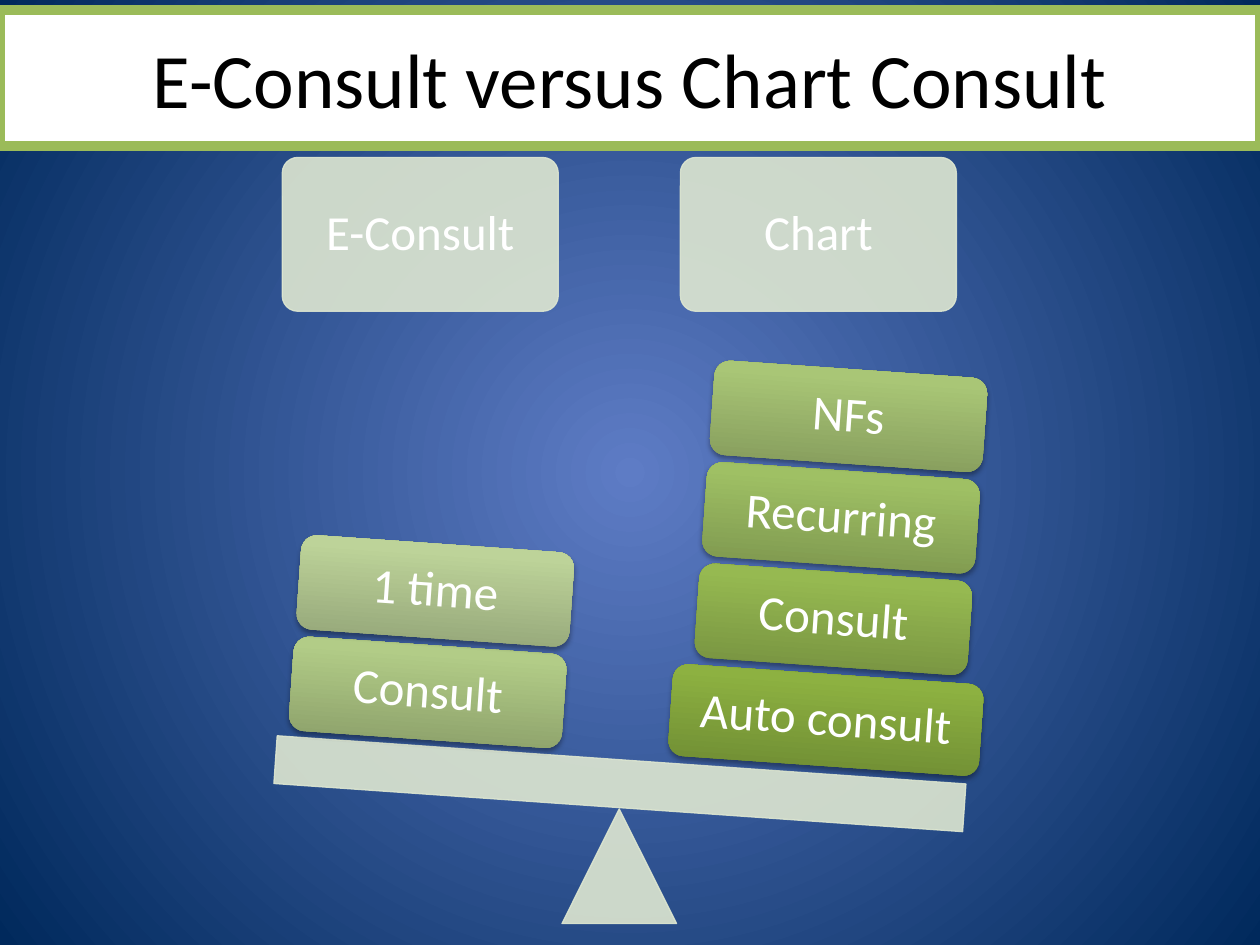
from lxml import etree
from pptx import Presentation
from pptx.dml.color import RGBColor
from pptx.enum.shapes import MSO_SHAPE
from pptx.enum.text import MSO_ANCHOR, PP_ALIGN
from pptx.oxml.ns import qn
from pptx.util import Inches, Pt

ROUNDED = MSO_SHAPE.ROUNDED_RECTANGLE
RECTANGLE = MSO_SHAPE.RECTANGLE
TRIANGLE = MSO_SHAPE.ISOSCELES_TRIANGLE
MIDDLE = MSO_ANCHOR.MIDDLE
CENTER = PP_ALIGN.CENTER

FONT = "Calibri"
WHITE = RGBColor(0xFF, 0xFF, 0xFF)
BLACK = RGBColor(0x00, 0x00, 0x00)
GREEN = RGBColor(0x9B, 0xBB, 0x59)
PALE_GREEN = RGBColor(0xDE, 0xE7, 0xD1)
GLOW_BLUE = RGBColor(0x5E, 0x7C, 0xC5)
NAVY = RGBColor(0x00, 0x29, 0x5C)

TILT = 4
BLOCK_SIZE = (2.17, 0.75)
STACK_STEP = (0.06, 0.805)
WIDE_BLOCK = (
    "Auto consult", (5.32, 5.35, 2.47, 0.73),
    [RGBColor(0x6C, 0x89, 0x32), RGBColor(0x8D, 0xB1, 0x41), RGBColor(0x8E, 0xB4, 0x3F)],
)
CHART_STACK = [
    ("Consult", [RGBColor(0x74, 0x8F, 0x3F), RGBColor(0x96, 0xB9, 0x51), RGBColor(0x98, 0xBC, 0x50)]),
    ("Recurring", [RGBColor(0x7B, 0x94, 0x4D), RGBColor(0x9F, 0xC0, 0x64), RGBColor(0xA1, 0xC2, 0x62)]),
    ("NFs", [RGBColor(0x82, 0x98, 0x5A), RGBColor(0xA9, 0xC6, 0x76), RGBColor(0xAA, 0xC8, 0x75)]),
]
E_CONSULT_STACK = [
    ("Consult", [RGBColor(0x89, 0x9D, 0x68), RGBColor(0xB2, 0xCC, 0x87), RGBColor(0xB4, 0xCF, 0x87)]),
    ("1 time", [RGBColor(0x91, 0xA2, 0x76), RGBColor(0xBD, 0xD3, 0x99), RGBColor(0xBE, 0xD5, 0x99)]),
]


def add_child(parent, tag, **attributes):
    """Append a DrawingML element and return it."""
    return etree.SubElement(parent, qn(tag), {key: str(value) for key, value in attributes.items()})


def set_gradient_stops(element, stops):
    """Replace the stops of the gradient in an element and return the gradient."""
    gradient = element.find(".//" + qn("a:gradFill"))
    gradient.clear()
    gradient.set("rotWithShape", "1")
    stop_list = add_child(gradient, "a:gsLst")
    for percent, color in stops:
        stop = add_child(stop_list, "a:gs", pos=percent * 1000)
        add_child(stop, "a:srgbClr", val=color)
    return gradient


def paint_background(slide):
    """Fill the slide with a round blue glow."""
    slide.background.fill.gradient()
    gradient = set_gradient_stops(slide.element, [(0, GLOW_BLUE), (100, NAVY)])
    circle = add_child(gradient, "a:path", path="circle")
    add_child(circle, "a:fillToRect", l=50000, t=50000, r=50000, b=50000)


def write_text(shape, text, size, color):
    """Write one centred line in a shape."""
    shape.text_frame.vertical_anchor = MIDDLE
    para = shape.text_frame.paragraphs[0]
    para.alignment = CENTER
    span = para.add_run()
    span.text = text
    span.font.name = FONT
    span.font.size = Pt(size)
    span.font.color.rgb = color
    return para


def write_label(shape, text):
    """Write a white label with even margins in a shape."""
    frame = shape.text_frame
    frame.word_wrap = True
    frame.margin_left = frame.margin_right = Inches(0.12)
    frame.margin_top = frame.margin_bottom = Inches(0.12)
    write_text(shape, text, 28, WHITE).line_spacing = 0.9


def add_title(slide, text):
    """Place the title in a white banner with a green border."""
    title = slide.shapes.title
    title.left, title.top = Inches(0), Inches(0.08)
    title.width, title.height = Inches(10), Inches(1.08)
    title.fill.solid()
    title.fill.fore_color.rgb = WHITE
    title.line.color.rgb = GREEN
    title.line.width = Pt(6)
    write_text(title, text, 44, BLACK)


def add_pale_shape(slide, kind, place, rotation=0):
    """Add a slightly transparent pale green shape."""
    shape = slide.shapes.add_shape(kind, *map(Inches, place))
    shape.rotation = rotation
    shape.shadow.inherit = False
    shape.fill.solid()
    shape.fill.fore_color.rgb = PALE_GREEN
    shape.line.color.rgb = PALE_GREEN
    shape.line.width = Pt(0.75)
    for color in shape.element.spPr.iter(qn("a:srgbClr")):
        add_child(color, "a:alpha", val=90000)
    return shape


def add_heading(slide, text, left):
    """Add a pale heading box above one side of the scale."""
    box = add_pale_shape(slide, ROUNDED, (left, 1.25, 2.19, 1.22))
    box.adjustments[0] = 0.1
    write_label(box, text)


def add_block(slide, text, place, colors):
    """Add a tilted green block with a soft shadow."""
    block = slide.shapes.add_shape(ROUNDED, *map(Inches, place))
    block.rotation = TILT
    block.line.fill.background()
    block.fill.gradient()
    properties = block.element.spPr
    gradient = set_gradient_stops(properties, zip((0, 80, 100), colors))
    add_child(gradient, "a:lin", ang=270 * 60000, scaled=0)
    block.shadow.inherit = False
    shadow = add_child(
        properties.find(qn("a:effectLst")), "a:outerShdw",
        blurRad=Pt(3.1), dist=Pt(1.8), dir=90 * 60000, rotWithShape=0,
    )
    add_child(add_child(shadow, "a:srgbClr", val=BLACK), "a:alpha", val=35000)
    write_label(block, text)


def add_stack(slide, left, top, blocks):
    """Pile blocks upward along the tilt of the scale."""
    step_right, step_up = STACK_STEP
    for level, (text, colors) in enumerate(blocks):
        place = (left + level * step_right, top - level * step_up, *BLOCK_SIZE)
        add_block(slide, text, place, colors)


def main():
    """Build the slide and save the deck."""
    deck = Presentation()
    deck.slide_width, deck.slide_height = Inches(10), Inches(7.5)
    page = deck.slides.add_slide(deck.slide_layouts.get_by_name("Title Only"))
    paint_background(page)
    add_title(page, "E-Consult versus Chart Consult")
    add_heading(page, "E-Consult", 2.24)
    add_heading(page, "Chart", 5.4)
    add_pale_shape(page, TRIANGLE, (4.46, 6.42, 0.91, 0.91))
    add_pale_shape(page, RECTANGLE, (2.18, 6.03, 5.48, 0.38), TILT)
    add_block(page, *WIDE_BLOCK)
    add_stack(page, 5.53, 4.54, CHART_STACK)
    add_stack(page, 2.31, 5.12, E_CONSULT_STACK)
    deck.save("out.pptx")


if __name__ == "__main__":
    main()
